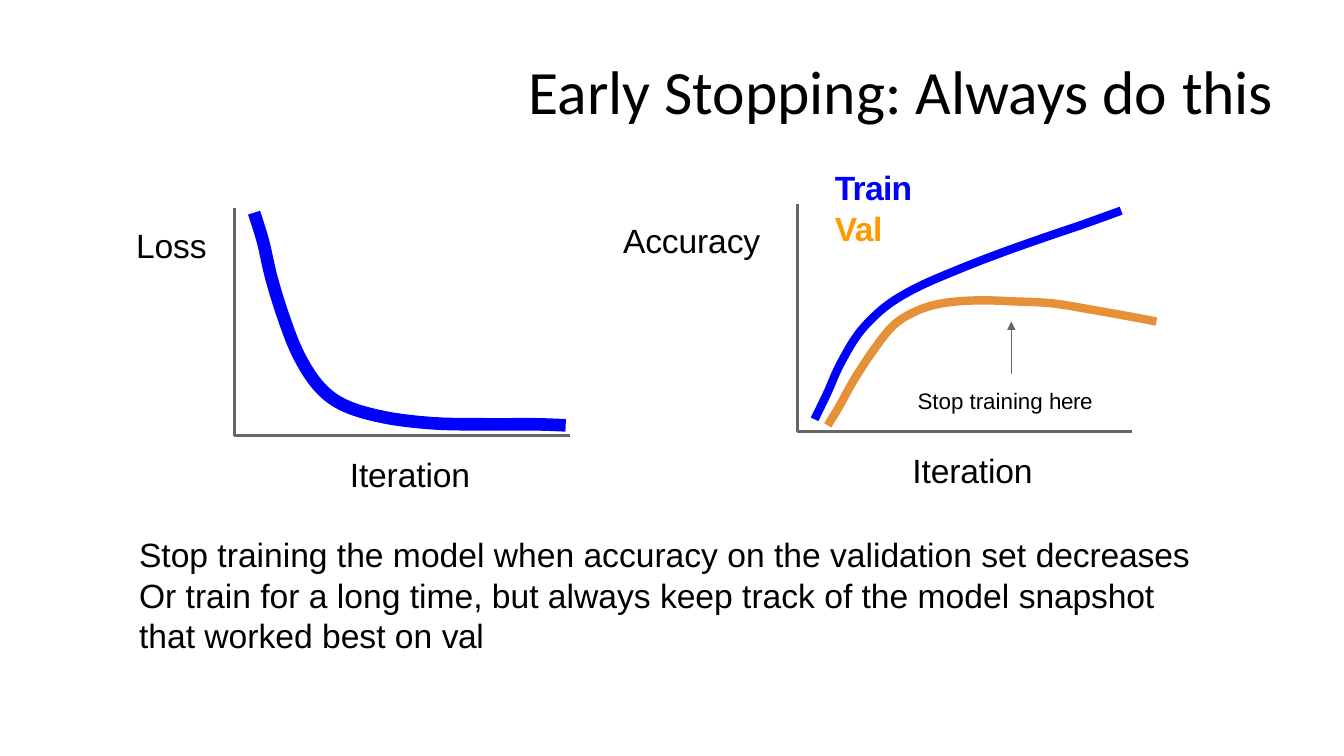
from lxml import etree
from pptx import Presentation, util as u
from pptx.dml.color import RGBColor
from pptx.enum import shapes, text
from pptx.oxml.ns import qn

COLORS = {"ink": "000000", "axis": "666666", "train": "0000FF",
          "val_curve": "E69137", "val_text": "FF9900"}
AXES_W, AXES_H = 3.32, 2.26

# Curve anchor points, in inches from the top left of the axes
LOSS = [(.19, .05), (.28, .34), (.36, .69), (.48, 1.08), (.63, 1.46),
        (.83, 1.77), (1.08, 1.96), (1.48, 2.08), (1.97, 2.14),
        (2.47, 2.15), (2.98, 2.15), (3.28, 2.16)]
TRAIN = [(.17, 2.14), (.30, 1.87), (.41, 1.62), (.57, 1.34), (.73, 1.15),
         (.93, .98), (1.21, .82), (1.58, .66), (1.99, .50), (2.41, .35),
         (2.85, .20), (3.21, .07)]
VAL = [(.30, 2.20), (.41, 2.02), (.56, 1.75), (.75, 1.46), (.95, 1.21),
       (1.17, 1.07), (1.43, .99), (1.78, .96), (2.14, .97), (2.53, .99),
       (2.96, 1.06), (3.35, 1.13), (3.56, 1.17)]


def rgb(name):
    return RGBColor.from_string(COLORS[name])


def write(sp, runs, size=24, font="Arial", bold=False, align=text.PP_ALIGN.LEFT,
          anchor=text.MSO_ANCHOR.TOP):
    """Fill a shape with runs of (text, letter spacing in points, colour)."""
    tf = sp.text_frame
    tf.word_wrap = True
    tf.auto_size = text.MSO_AUTO_SIZE.SHAPE_TO_FIT_TEXT
    tf.vertical_anchor = anchor
    tf.margin_left = tf.margin_top = u.Inches(0.02)
    tf.margin_right = tf.margin_bottom = 0
    p = tf.paragraphs[0]
    p.alignment = align
    p.space_before = u.Pt(1.3)
    for words, spacing, color in runs:
        r = p.add_run()
        r.text = words
        r.font.size, r.font.name, r.font.bold = u.Pt(size), font, bold
        r.font.color.rgb = rgb(color)
        r._r.get_or_add_rPr().set("spc", str(round(spacing * 100)))


def add_text(s, box, runs, **fmt):
    write(s.shapes.add_textbox(*map(u.Inches, box)), runs, **fmt)


def smooth(points, steps=5):
    """Spline through the points, sampled evenly between each pair."""
    ends = [points[0], *points, points[-1]]
    out = []
    for a, b, c, d in zip(ends, ends[1:], ends[2:], ends[3:]):
        for i in range(steps):
            t = i / steps
            out.append(tuple(
                (2 * q + (r - p) * t + (2 * p - 5 * q + 4 * r - v) * t ** 2
                 + (3 * q - p - 3 * r + v) * t ** 3) / 2
                for p, q, r, v in zip(a, b, c, d)))
    return out + [points[-1]]


def add_polyline(s, left, top, points, color, width):
    pts = [(u.Inches(left + x), u.Inches(top + y)) for x, y in points]
    builder = s.shapes.build_freeform(*pts[0])
    builder.add_line_segments(pts[1:], close=False)
    sp = builder.convert_to_shape()
    sp.shadow.inherit = False
    sp.fill.background()
    sp.line.color.rgb = rgb(color)
    sp.line.width = u.Pt(width)


def add_plot(s, left, top, y_label, y_label_box, curves):
    """Axes, curves and axis labels; y_label_box is relative to the axes."""
    add_polyline(s, left, top, [(0, 0), (0, AXES_H), (AXES_W, AXES_H)], "axis", 2.25)
    for points, color, width in curves:
        add_polyline(s, left, top, smooth(points), color, width)
    add_text(s, (left + 1.12, top + 2.42, 1.24, 0.42), [("Iteration", -0.1, "ink")])
    dx, dy, w, h = y_label_box
    add_text(s, (left + dx, top + dy, w, h), [(y_label, -0.1, "ink")])


def add_accuracy_notes(s, left, top):
    """Legend, and the arrow that marks where to stop."""
    add_text(s, (left + 0.35, top - 0.38, 0.83, 0.83),
             [("Train ", -0.5, "train"), ("Val", -0.3, "val_text")], bold=True)
    x = u.Inches(left + 2.12)
    arrow = s.shapes.add_connector(shapes.MSO_CONNECTOR.STRAIGHT, x,
                                   u.Inches(top + 1.69), x, u.Inches(top + 1.17))
    arrow.line.color.rgb = rgb("axis")
    arrow.line.width = u.Pt(0.75)
    etree.SubElement(arrow.line._get_or_add_ln(), qn("a:tailEnd"), type="triangle")
    etree.SubElement(arrow._element.spPr, qn("a:effectLst"))
    add_text(s, (left + 1.17, top + 1.8, 1.79, 0.29),
             [("Stop training ", 0, "ink"), ("here", -0.3, "ink")], size=16)


def add_title(s, box):
    title = s.shapes.title
    title.left, title.top, title.width, title.height = map(u.Inches, box)
    write(title, [("Early Stopping: Always do ", 0, "ink"), ("this", -0.3, "ink")],
          size=44, font="Calibri", align=text.PP_ALIGN.CENTER,
          anchor=text.MSO_ANCHOR.MIDDLE)


def add_advice(s, box):
    add_text(s, box, [
        ("Stop training the model when accuracy on the validation set ", 0, "ink"),
        ("decreases ", -0.1, "ink"),
        ("Or train for a long time, but always keep track of the model ", 0, "ink"),
        ("snapshot ", -0.1, "ink"),
        ("that worked best on ", 0, "ink"), ("val", -0.3, "ink")])


def main():
    prs = Presentation()
    prs.slide_width, prs.slide_height = u.Inches(13.33), u.Inches(7.5)
    s = prs.slides.add_slide(prs.slide_layouts[5])
    add_title(s, (0.03, 0.5, 17.78, 0.76))
    # Loss on the left, accuracy on the right
    add_plot(s, 2.33, 2.06, "Loss", (-1, 0.15, 0.74, 0.42), [(LOSS, "train", 9)])
    add_plot(s, 7.91, 2.02, "Accuracy", (-1.75, 0.14, 1.41, 0.42),
             [(TRAIN, "train", 6), (VAL, "val_curve", 6)])
    add_accuracy_notes(s, 7.91, 2.02)
    add_advice(s, (1.36, 5.28, 10.46, 1.23))
    prs.save("out.pptx")


if __name__ == "__main__":
    main()
